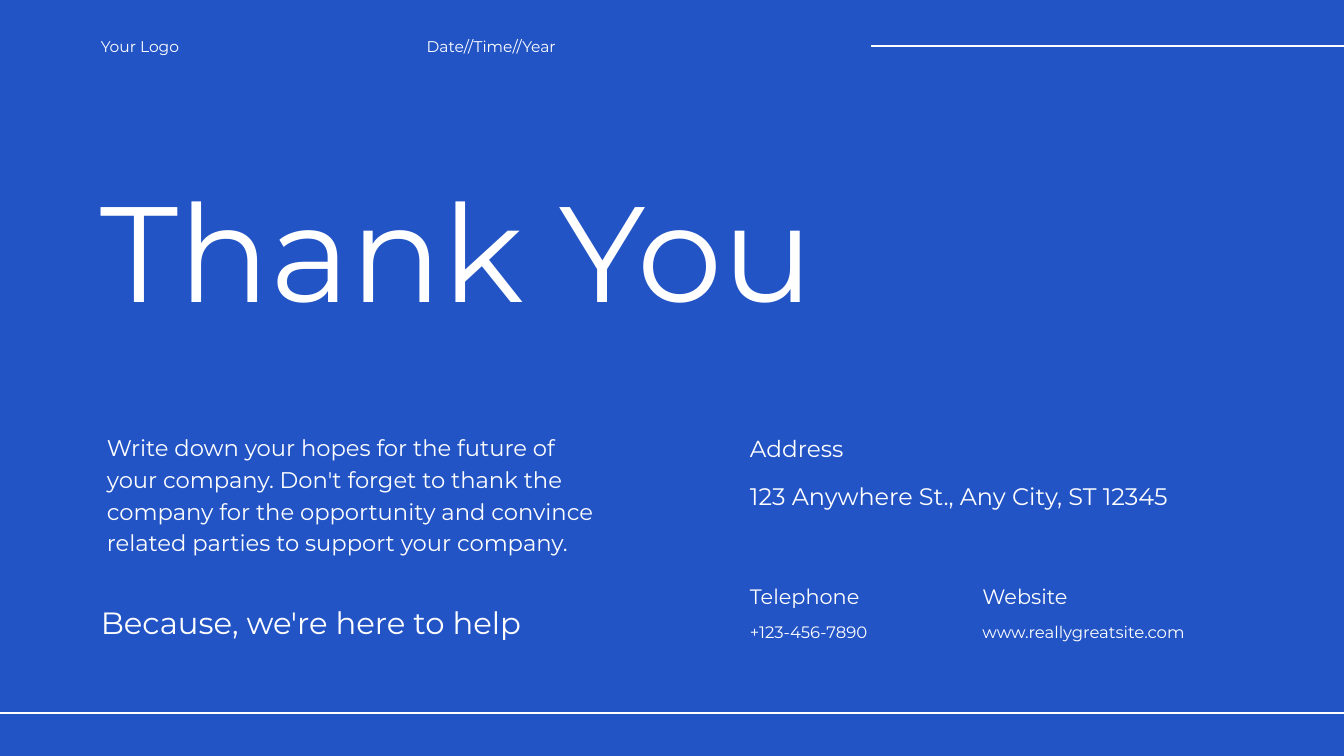
from lxml.etree import SubElement
from pptx import Presentation
from pptx.dml.color import RGBColor
from pptx.enum.shapes import MSO_CONNECTOR
from pptx.enum.text import MSO_ANCHOR, MSO_AUTO_SIZE, PP_ALIGN
from pptx.oxml.ns import qn
from pptx.util import Inches, Pt

# Content
FONT, BLUE, WHITE = "Montserrat", "2254C5", "FFFFFF"
LEFT, MID, RIGHT = 1.5, 11.16, 14.62
LEAD = 1.4  # line height as a multiple of the text size

TITLE = ("Thank You", (LEFT, 2.08, 14.28, 2.64), 145.3)
BODY = (
    [
        "Write down your hopes for the future of",
        "your company. Don't forget to thank the",
        "company for the opportunity and convince",
        "related parties to support your company.",
    ],
    (LEFT, 6.39, 8.82, 1.89),
    24.3,
)
NOTES = [
    ("Your Logo", (LEFT, 0.5, 1.87, 0.32), 16.6),
    ("Date//Time//Year", (6.35, 0.5, 2.83, 0.32), 16.6),
    ("Because, we're here to help", (LEFT, 8.9, 7.99, 0.62), 32.9),
    ("Address", (MID, 6.4, 2.6, 0.45), 24.8),
    ("123 Anywhere St., Any City, ST 12345", (MID, 7.09, 7, 0.48), 25.6),
]
CONTACTS = [
    (MID, "Telephone", "+123-456-7890"),
    (RIGHT, "Website", "www.reallygreatsite.com"),
]
RULES = [(0, 10.61, 3), (12.96, 0.69, 2.25)]  # start, height, weight


def color(code):
    return RGBColor.from_string(code)


def write(shape, lines, box, size, inset=0):
    shape.left, shape.top, shape.width, shape.height = map(Inches, box)
    frame = shape.text_frame
    frame.text = "\n".join(lines)
    frame.word_wrap = True
    frame.auto_size = MSO_AUTO_SIZE.NONE
    frame.vertical_anchor = MSO_ANCHOR.TOP
    frame.margin_left = Inches(inset)
    frame.margin_top = frame.margin_right = frame.margin_bottom = 0
    for para in frame.paragraphs:
        props = para._p.get_or_add_pPr()
        props.set("marL", "0")
        props.set("indent", "0")
        SubElement(props, qn("a:buNone"))
        para.alignment = PP_ALIGN.LEFT
        para.space_before = Pt(0)
        para.line_spacing = Pt(round(size * LEAD, 1))
        para.font.name = FONT
        para.font.size = Pt(size)
        para.font.color.rgb = color(WHITE)


def label(slide, text, box, size):
    write(slide.shapes.add_textbox(0, 0, 0, 0), [text], box, size)


def rule(slide, start, top, weight, end):
    line = slide.shapes.add_connector(
        MSO_CONNECTOR.STRAIGHT, Inches(start), Inches(top), end, Inches(top))
    line.line.color.rgb = color(WHITE)
    line.line.width = Pt(weight)
    SubElement(line._element.spPr, qn("a:effectLst"))


def main():
    deck = Presentation()
    deck.slide_width, deck.slide_height = Inches(20), Inches(11.25)
    slide = deck.slides.add_slide(deck.slide_layouts[1])
    slide.background.fill.solid()
    slide.background.fill.fore_color.rgb = color(BLUE)

    # Title and message
    text, box, size = TITLE
    write(slide.shapes.title, [text], box, size)
    lines, box, size = BODY
    write(slide.placeholders[1], lines, box, size, inset=0.09)

    # Header, closing line and address
    for note in NOTES:
        label(slide, *note)

    # Contact columns
    for left, head, value in CONTACTS:
        label(slide, head, (left, 8.62, 2.44, 0.42), 22.3)
        label(slide, value, (left, 9.2, 3.53, 0.32), 17.7)

    # Rules running to the right edge
    for start, top, weight in RULES:
        rule(slide, start, top, weight, deck.slide_width)

    deck.save("out.pptx")


if __name__ == "__main__":
    main()
